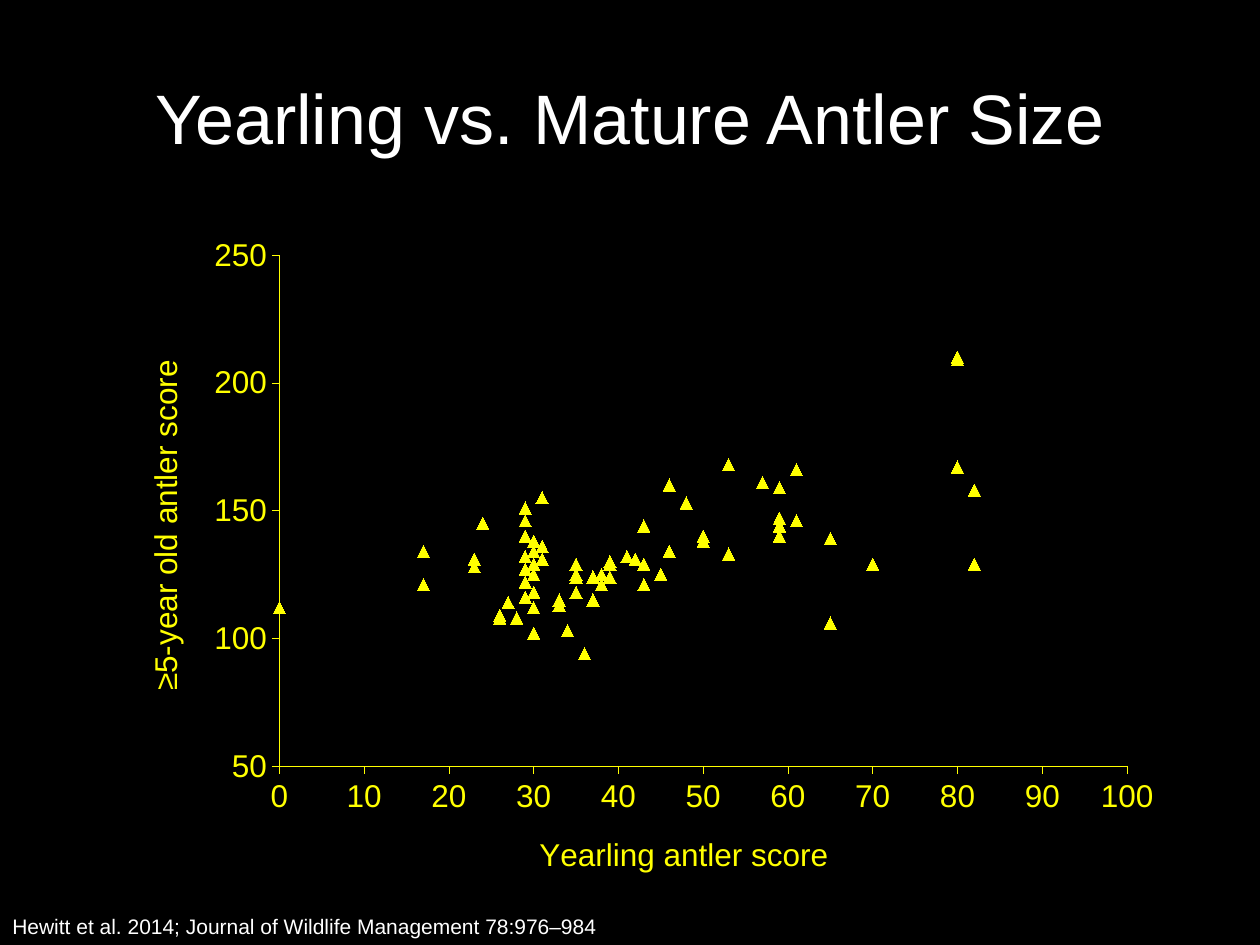
from pptx import Presentation
from pptx.chart.data import XyChartData
from pptx.dml.color import RGBColor
from pptx.enum.chart import XL_CHART_TYPE, XL_MARKER_STYLE, XL_TICK_MARK
from pptx.enum.text import MSO_ANCHOR, PP_ALIGN
from pptx.oxml import parse_xml
from pptx.oxml.ns import nsdecls
from pptx.util import Pt

PX = 914400 // 126
FONT = "Arial"
BLACK, WHITE, YELLOW = "000000", "FFFFFF", "FFFF00"
TITLE = "Yearling vs. Mature Antler Size"
CITATION = "Hewitt et al. 2014; Journal of Wildlife Management 78:976–984"
AXES = {
    "category_axis": ("Yearling antler score", 0, 100, 10),
    "value_axis": ("≥5-year old antler score", 50, 250, 50),
}
PLOT = {"x": 0.154, "y": 0.065, "w": 0.799, "h": 0.738}
SCORES = {
    "Series 1": (
        [36, 34, 30, 30, 26, 28, 26, 27, 33, 33, 30, 37, 37, 35, 35, 29, 29, 38, 35, 35,
         30, 30, 17, 17, 23, 39, 39, 23, 31, 31, 29, 29, 30, 30, 43, 24, 29, 29, 31, 0],
        [94, 103, 102, 112, 108, 108, 109, 114, 113, 115, 118, 124, 115, 118, 125, 122,
         127, 125, 124, 129, 125, 129, 121, 134, 128, 129, 130, 131, 131, 136, 132, 140,
         134, 138, 144, 145, 146, 151, 155, 112],
    ),
    "Series 2": (
        [29, 38, 43, 65, 65, 39, 45, 70, 43, 42, 41, 53, 46, 50, 50, 59,
         82, 82, 59, 59, 61, 59, 59, 48, 46, 57, 61, 53, 80, 80, 80],
        [116, 121, 121, 139, 106, 124, 125, 129, 129, 131, 132, 133, 134, 140, 138, 140,
         129, 158, 144, 147, 146, 159, 147, 153, 160, 161, 166, 168, 210, 167, 209],
    ),
}


def color(value):
    return RGBColor.from_string(value)


def place(*lengths):
    return [length * PX for length in lengths]


def style_font(font, size, value):
    font.name, font.size, font.bold = FONT, Pt(size), False
    font.color.rgb = color(value)


def add_text(page, area, text, size, align):
    frame = page.shapes.add_textbox(*place(*area)).text_frame
    frame.word_wrap = True
    frame.vertical_anchor = MSO_ANCHOR.MIDDLE
    para = frame.paragraphs[0]
    para.alignment = align
    span = para.add_run()
    span.text = text
    style_font(span.font, size, WHITE)


def style_axis(axis, title, low, high, step):
    axis.minimum_scale, axis.maximum_scale, axis.major_unit = low, high, step
    axis.has_major_gridlines = False
    axis.major_tick_mark = XL_TICK_MARK.OUTSIDE
    axis.minor_tick_mark = XL_TICK_MARK.NONE
    axis.format.line.color.rgb = color(YELLOW)
    axis.format.line.width = Pt(0.25)
    axis.tick_labels.number_format = "General"
    axis.tick_labels.number_format_is_linked = False
    style_font(axis.tick_labels.font, 18, YELLOW)
    span = axis.axis_title.text_frame.paragraphs[0].add_run()
    span.text = title
    style_font(span.font, 18, YELLOW)


def set_plot_area(chart):
    modes = "".join(f'<c:{side}Mode val="edge"/>' for side in "xy")
    sizes = "".join(f'<c:{side} val="{share}"/>' for side, share in PLOT.items())
    layout = parse_xml(
        f'<c:layout {nsdecls("c")}><c:manualLayout><c:layoutTarget val="inner"/>'
        f"{modes}{sizes}</c:manualLayout></c:layout>"
    )
    area = chart._chartSpace.chart.plotArea
    for old in area.findall(layout.tag):
        area.remove(old)
    area.insert(0, layout)


def add_scatter(page, area):
    data = XyChartData()
    for name, (yearling, mature) in SCORES.items():
        series = data.add_series(name)
        for point in zip(yearling, mature):
            series.add_data_point(*point)
    chart = page.shapes.add_chart(XL_CHART_TYPE.XY_SCATTER, *place(*area), data).chart
    chart.has_legend = chart.has_title = False
    style_font(chart.font, 18, YELLOW)
    for name, settings in AXES.items():
        style_axis(getattr(chart, name), *settings)
    chart.plots[0].vary_by_categories = False
    for series in chart.plots[0].series:
        series.smooth = False
        series.format.line.fill.background()
        marker = series.marker
        marker.style, marker.size = XL_MARKER_STYLE.TRIANGLE, 7
        marker.format.fill.solid()
        marker.format.fill.fore_color.rgb = color(YELLOW)
        marker.format.line.color.rgb = color(YELLOW)
    set_plot_area(chart)


def main():
    """Build the antler size scatter slide."""
    deck = Presentation()
    deck.slide_width, deck.slide_height = place(1260, 945)
    page = deck.slides.add_slide(deck.slide_layouts[6])
    page.background.fill.solid()
    page.background.fill.fore_color.rgb = color(BLACK)
    add_text(page, (63, 38, 1134, 158), TITLE, 40, PP_ALIGN.CENTER)
    add_scatter(page, (116, 210, 1061, 693))
    add_text(page, (0, 907, 630, 38), CITATION, 12, PP_ALIGN.LEFT)
    deck.save("out.pptx")


if __name__ == "__main__":
    main()
